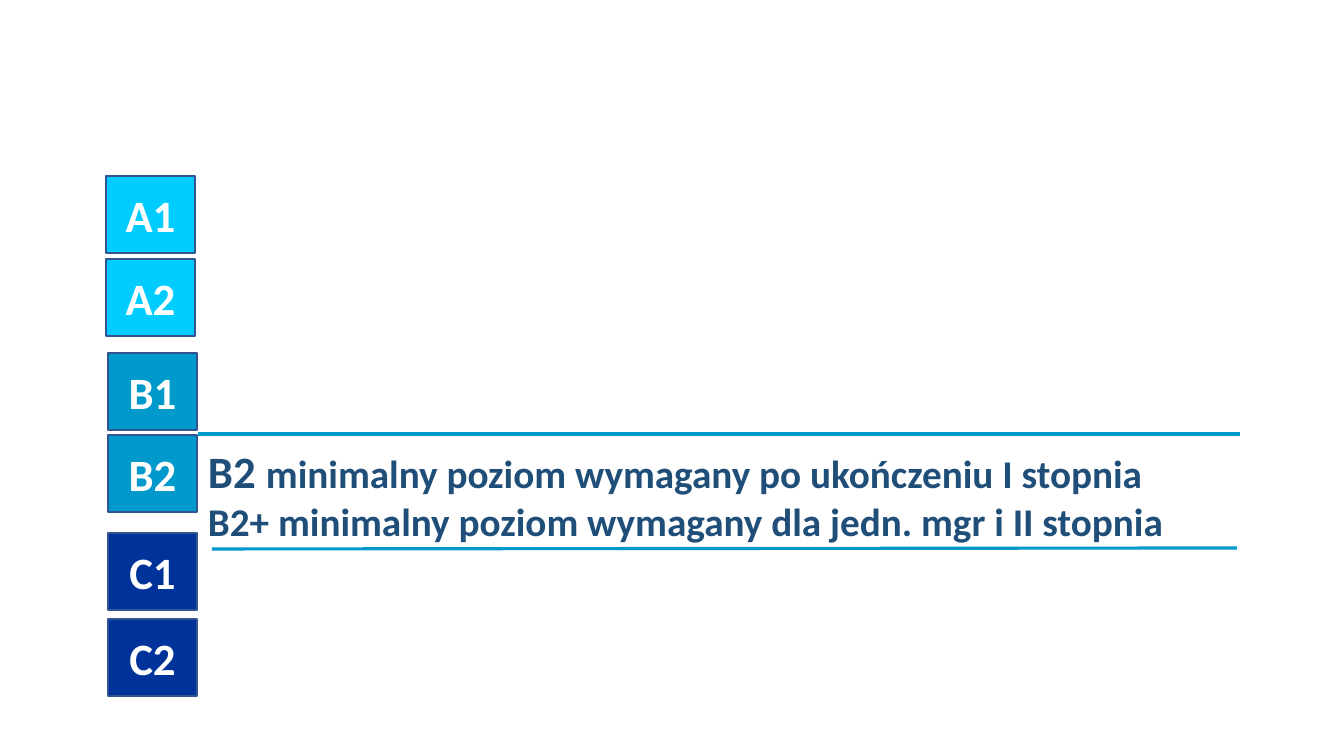
from lxml.etree import SubElement
from pptx import Presentation
from pptx.dml.color import RGBColor
from pptx.enum.shapes import MSO_CONNECTOR, MSO_SHAPE
from pptx.enum.text import MSO_ANCHOR, PP_ALIGN
from pptx.oxml.ns import qn
from pptx.util import Pt

LEVELS = [
    ("A1", 106, 176, "00CCFF"),
    ("A2", 106, 259, "00CCFF"),
    ("B1", 108, 353, "0099CC"),
    ("B2", 108, 435, "0099CC"),
    ("C1", 108, 533, "003399"),
    ("C2", 108, 619, "003399"),
]
NOTES = [
    [("B2 ", 32), ("minimalny poziom wymagany po ukończeniu I stopnia", 28)],
    [("B2+ minimalny poziom wymagany dla jedn. mgr i II stopnia", 28)],
]
RULES = [(212, 549, 1237, 548), (198, 434, 1240, 434)]
WIDE, HIGH = 89, 77


def px(num):
    return round(num * 914400 / 100.8)


def tint(code):
    return RGBColor.from_string(code)


def write(frame, paras, color="FFFFFF", align=PP_ALIGN.LEFT,
          anchor=MSO_ANCHOR.TOP, top=5):
    frame.word_wrap = True
    frame.vertical_anchor = anchor
    frame.margin_left = frame.margin_right = px(10)
    frame.margin_top = px(top)
    frame.margin_bottom = px(5)
    for i, runs in enumerate(paras):
        para = frame.add_paragraph() if i else frame.paragraphs[0]
        para.alignment = align
        for text, size in runs:
            run = para.add_run()
            run.text = text
            font = run.font
            font.name, font.size, font.bold = "Calibri", Pt(size), True
            font.color.rgb = tint(color)


deck = Presentation()
deck.slide_width, deck.slide_height = px(1344), px(756)
slide = deck.slides.add_slide(deck.slide_layouts[6])
shapes = slide.shapes

note = shapes.add_textbox(px(198), px(435), px(1038), px(73))
write(note.text_frame, NOTES, color="1F4E79", top=9)

for name, left, top, fill in LEVELS:
    box = shapes.add_shape(MSO_SHAPE.RECTANGLE, px(left), px(top), px(WIDE), px(HIGH))
    box.shadow.inherit = False
    box.fill.solid()
    box.fill.fore_color.rgb = tint(fill)
    box.line.color.rgb = tint("325491")
    box.line.width = Pt(1)
    write(box.text_frame, [[(name, 32)]], align=PP_ALIGN.CENTER,
          anchor=MSO_ANCHOR.MIDDLE)

for ends in RULES:
    rule = shapes.add_connector(MSO_CONNECTOR.STRAIGHT, *map(px, ends))
    rule.line.color.rgb = tint("0099CC")
    rule.line.width = Pt(2.25)
    SubElement(rule._element.spPr, qn("a:effectLst"))

deck.save("out.pptx")
